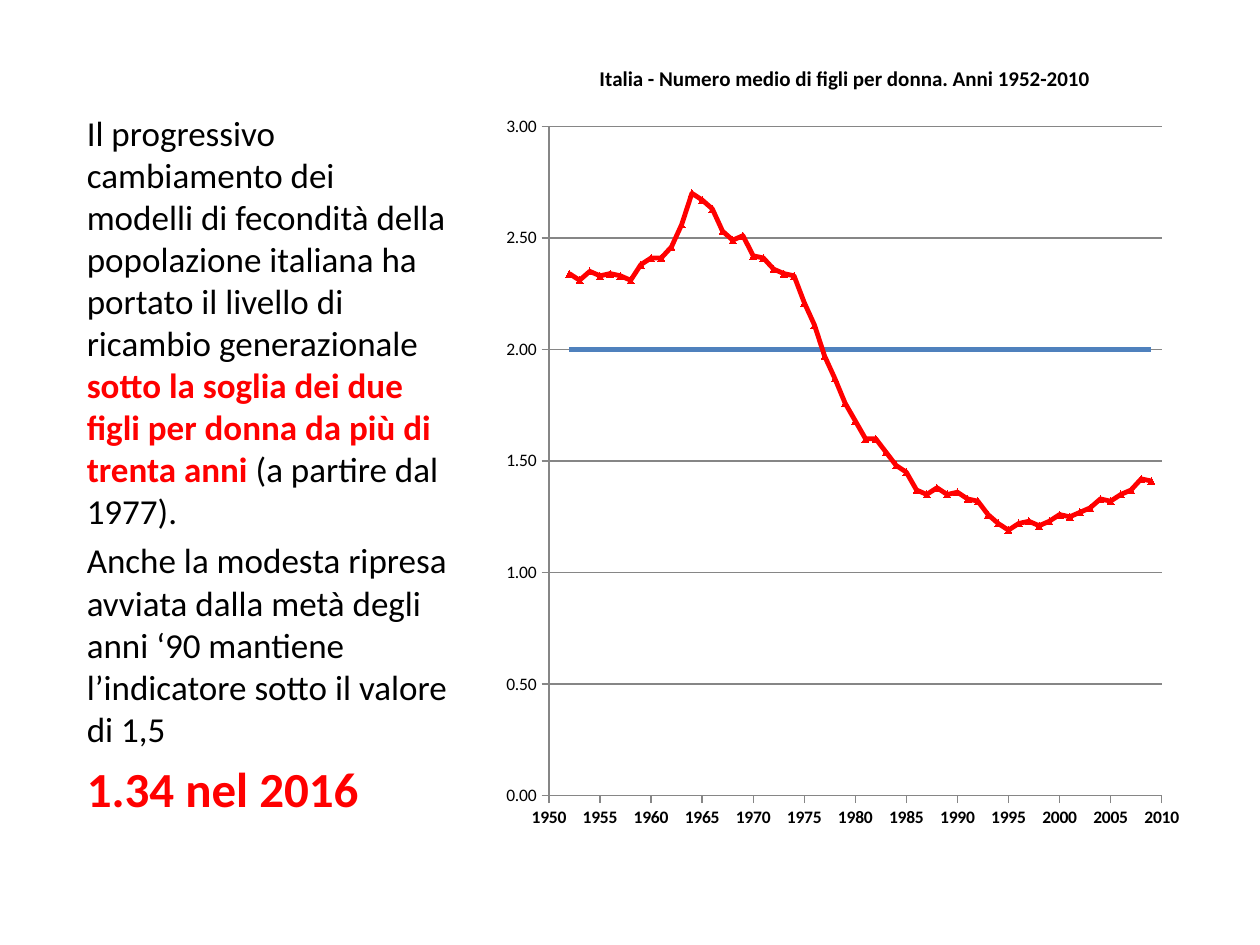
from dataclasses import dataclass

from lxml.etree import SubElement
from pptx import Presentation
from pptx.chart.data import XyChartData
from pptx.dml.color import RGBColor
from pptx.enum.chart import XL_CHART_TYPE, XL_MARKER_STYLE, XL_TICK_MARK
from pptx.oxml.ns import qn
from pptx.util import Cm, Pt


@dataclass(frozen=True)
class Theme:
    """Colours, font and type sizes of the slide."""
    font: str = "Calibri"
    ink: RGBColor = RGBColor(0, 0, 0)
    red: RGBColor = RGBColor(255, 0, 0)
    blue: RGBColor = RGBColor(0x4F, 0x81, 0xBD)
    grey: RGBColor = RGBColor(0x86, 0x86, 0x86)
    body: int = 20
    big: int = 28
    head: int = 12
    axis: int = 10


THEME = Theme()
START = 1952
RATES = [
    2.34, 2.31, 2.35, 2.33, 2.34, 2.33, 2.31, 2.38, 2.41, 2.41,
    2.46, 2.56, 2.7, 2.67, 2.63, 2.53, 2.49, 2.51, 2.42, 2.41,
    2.36, 2.34, 2.33, 2.21, 2.11, 1.97, 1.87, 1.76, 1.68, 1.6,
    1.6, 1.54, 1.48, 1.45, 1.37, 1.35, 1.38, 1.35, 1.36, 1.33,
    1.32, 1.26, 1.22, 1.19, 1.22, 1.23, 1.21, 1.23, 1.26, 1.25,
    1.27, 1.29, 1.33, 1.32, 1.35, 1.37, 1.42, 1.41,
]
PARAS = [
    [("Il progressivo cambiamento dei modelli di fecondità della "
      "popolazione italiana ha portato il livello di ricambio "
      "generazionale ", THEME.body, False),
     ("sotto la soglia dei due figli per donna da più di trenta anni ",
      THEME.body, True),
     ("(a partire dal 1977).", THEME.body, False)],
    [("Anche la modesta ripresa avviata dalla metà degli anni ‘90 "
      "mantiene l’indicatore sotto il valore di 1,5", THEME.body, False)],
    [("1.34 nel 2016", THEME.big, True)],
]


def style(font, size, bold=False, color=THEME.ink):
    """Set the look of a font."""
    font.name, font.size, font.bold = THEME.font, Pt(size), bold
    font.color.rgb = color


def add_text(slide, box):
    """Write the comment, with its key words in bold red."""
    frame = slide.shapes.add_textbox(*box).text_frame
    frame.word_wrap = True
    for index, parts in enumerate(PARAS):
        para = frame.add_paragraph() if index else frame.paragraphs[0]
        if index:
            para.space_before = Pt(parts[0][1] * 0.2)
        for text, size, key in parts:
            run = para.add_run()
            run.text = text
            style(run.font, size, key, THEME.red if key else THEME.ink)


def set_plot(chart, x, y, w, h):
    """Fix the inner plot area as shares of the chart."""
    area = chart.element.find(".//" + qn("c:plotArea"))
    old = area.find(qn("c:layout"))
    if old is not None:
        area.remove(old)
    frame = SubElement(area, qn("c:layout"))
    area.insert(0, frame)
    inner = SubElement(frame, qn("c:manualLayout"))
    pairs = [("layoutTarget", "inner"), ("xMode", "edge"), ("yMode", "edge"),
             ("x", x), ("y", y), ("w", w), ("h", h)]
    for tag, value in pairs:
        SubElement(inner, qn("c:" + tag)).set("val", str(value))


def set_axis(axis, low, high, step, code, bold):
    """Set the scale, labels and line of an axis."""
    axis.minimum_scale, axis.maximum_scale = low, high
    axis.major_unit = step
    axis.major_tick_mark = XL_TICK_MARK.OUTSIDE
    axis.minor_tick_mark = XL_TICK_MARK.NONE
    axis.tick_labels.number_format = code
    axis.tick_labels.number_format_is_linked = False
    style(axis.tick_labels.font, THEME.axis, bold)
    axis.format.line.color.rgb = THEME.grey
    axis.format.line.width = Pt(0.75)


def set_line(series, color):
    """Draw a series as a straight line of one colour."""
    series.smooth = False
    series.format.line.color.rgb = color
    series.format.line.width = Pt(2.75)
    series.marker.style = XL_MARKER_STYLE.NONE


def add_plot(slide, box):
    """Chart the children per woman against the two-child level."""
    data = XyChartData()
    for name, rates in (("Series 1", RATES), ("Series 2", [2] * len(RATES))):
        series = data.add_series(name)
        for year, rate in enumerate(rates, START):
            series.add_data_point(year, rate)
    chart = slide.shapes.add_chart(
        XL_CHART_TYPE.XY_SCATTER_LINES, *box, data).chart
    style(chart.font, THEME.axis)
    chart.has_legend = False
    chart.has_title = True
    run = chart.chart_title.text_frame.paragraphs[0].add_run()
    run.text = "Italia - Numero medio di figli per donna. Anni 1952-2010"
    style(run.font, THEME.head, True)
    set_axis(chart.category_axis, 1950, 2010, 5, "0", True)
    set_axis(chart.value_axis, 0, 3, 0.5, "0.00", False)
    chart.category_axis.has_major_gridlines = False
    chart.value_axis.has_major_gridlines = True
    grid = chart.value_axis.major_gridlines.format.line
    grid.color.rgb, grid.width = THEME.grey, Pt(0.75)
    plot = chart.plots[0]
    plot.vary_by_categories = False
    for series, color in zip(plot.series, (THEME.red, THEME.blue)):
        set_line(series, color)
    mark = plot.series[0].marker
    mark.style, mark.size = XL_MARKER_STYLE.TRIANGLE, 4
    mark.format.fill.solid()
    mark.format.fill.fore_color.rgb = THEME.red
    mark.format.line.color.rgb = THEME.red
    set_plot(chart, 0.08, 0.11, 0.87, 0.83)


def main():
    """Build the slide and save it."""
    deck = Presentation()
    deck.slide_width, deck.slide_height = Cm(25.4), Cm(19.05)
    slide = deck.slides.add_slide(deck.slide_layouts.get_by_name("Blank"))
    add_text(slide, (Cm(1.5), Cm(2.13), Cm(7.8), Cm(15.09)))
    add_plot(slide, (Cm(9.93), Cm(0.76), Cm(14.2), Cm(16.26)))
    deck.save("out.pptx")


if __name__ == "__main__":
    main()
